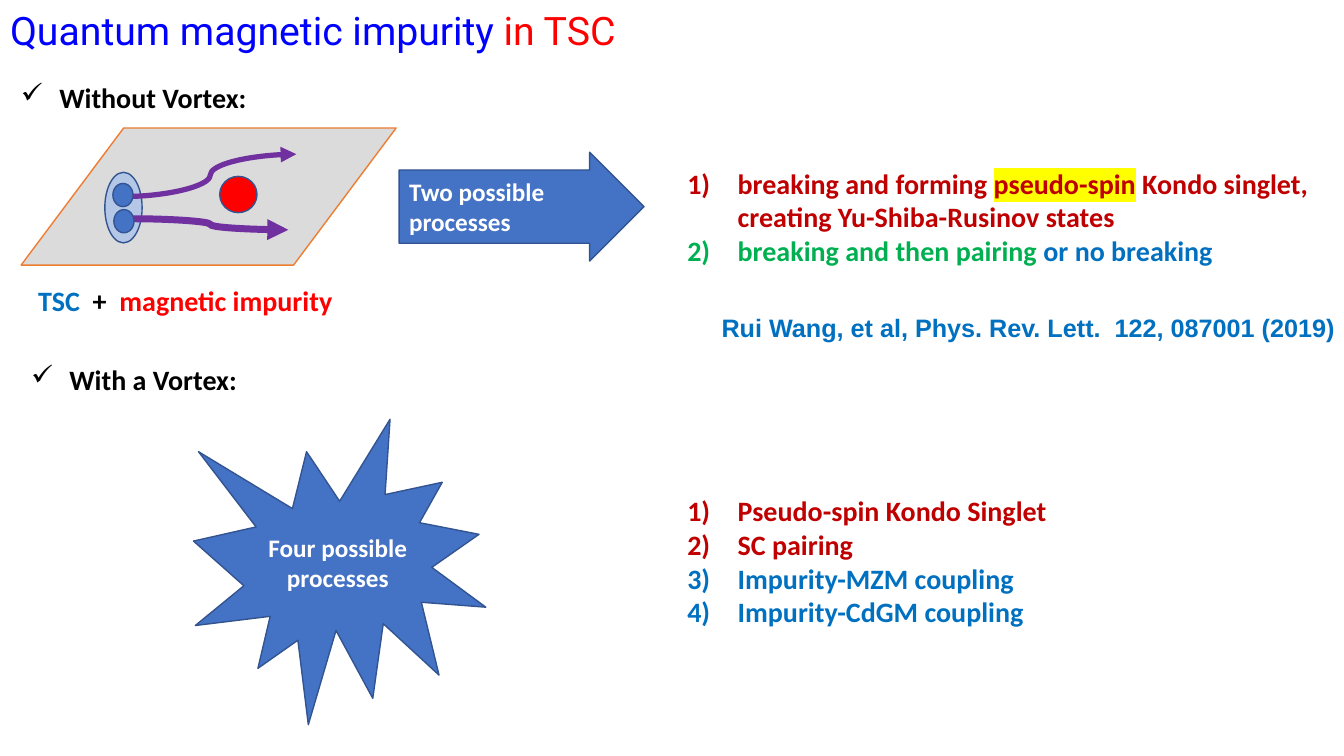
from lxml.etree import SubElement
from pptx import Presentation
from pptx.dml.color import RGBColor
from pptx.enum.shapes import MSO_CONNECTOR as Connector, MSO_SHAPE as Shape
from pptx.enum.text import MSO_ANCHOR as Anchor, MSO_AUTO_SIZE as AutoSize, PP_ALIGN as Align
from pptx.oxml import parse_xml
from pptx.oxml.ns import nsdecls, qn
from pptx.util import Inches, Pt

# The grid has ten columns and ten rows to the inch
CELL = Inches(0.1)
COLS, ROWS = 133.33, 75

COLORS = {
    "black": "000000", "white": "FFFFFF", "title": "0000FF", "red": "FF0000",
    "crimson": "C00000", "blue": "0070C0", "green": "00B050", "yellow": "FFFF00",
    "fill": "4472C4", "outline": "325491", "pair": "B4C7E7",
    "plane": "DBDBDB", "orange": "ED7D31", "purple": "7030A0",
}


def color(name):
    return RGBColor.from_string(COLORS[name])


def grid(*cells):
    return [round(c * CELL) for c in cells]


def add_runs(p, runs, size, font="Calibri", bold=True):
    """Write (text, colour[, highlight]) runs; a newline is a line break."""
    p.font.size, p.font.name, p.font.bold = Pt(size), font, bold
    for text, name, *mark in runs:
        for i, line in enumerate(text.split("\n")):
            if i:
                p.add_line_break()
            r = p.add_run()
            r.text = line
            r.font.color.rgb = color(name)
            if mark:
                hl = SubElement(r._r.get_or_add_rPr(), qn("a:highlight"))
                SubElement(hl, qn("a:srgbClr")).set("val", COLORS[mark[0]])


def add_bullet(p, indent, tag, **attrs):
    pPr = p._p.get_or_add_pPr()
    pPr.set("marL", str(Inches(indent)))
    pPr.set("indent", str(-Inches(indent)))
    values = " ".join(f'{k}="{v}"' for k, v in attrs.items())
    pPr.insert(0, parse_xml(f'<a:{tag} {nsdecls("a")} {values}/>'))


def add_text(slide, box, paragraphs, size=20, font="Calibri"):
    tf = slide.shapes.add_textbox(*grid(*box)).text_frame
    tf.word_wrap = True
    for i, runs in enumerate(paragraphs):
        p = tf.add_paragraph() if i else tf.paragraphs[0]
        add_runs(p, runs, size, font)
    return tf.paragraphs


def add_heading(slide, box, text):
    for p in add_text(slide, box, [[(text, "black")]]):
        add_bullet(p, 0.38, "buChar", char="✓")


def add_numbered(slide, box, paragraphs):
    for p in add_text(slide, box, paragraphs):
        add_bullet(p, 0.5, "buAutoNum", type="arabicParenR")


def add_figure(slide, kind, box, fill="fill", line="outline", adjust=()):
    sp = slide.shapes.add_shape(kind, *grid(*box))
    sp.shadow.inherit = False
    sp.fill.solid()
    sp.fill.fore_color.rgb = color(fill)
    sp.line.color.rgb = color(line)
    sp.line.width = Pt(1)
    for i, value in enumerate(adjust):
        sp.adjustments[i] = value
    return sp


def add_label(sp, text, align):
    tf = sp.text_frame
    tf.word_wrap = True
    tf.vertical_anchor = Anchor.MIDDLE
    p = tf.paragraphs[0]
    p.alignment = align
    add_runs(p, [(text, "white")], 18)


def add_path(slide, ends, width):
    cxn = slide.shapes.add_connector(Connector.CURVE, *grid(*ends))
    cxn.line.color.rgb = color("purple")
    cxn.line.width = Pt(width)
    SubElement(cxn.line._get_or_add_ln(), qn("a:tailEnd")).set("type", "triangle")
    SubElement(cxn._element.spPr, qn("a:effectLst"))


def add_title(slide, box, runs):
    title = slide.shapes.title
    title.left, title.top, title.width, title.height = grid(*box)
    tf = title.text_frame
    tf.word_wrap = True
    tf.auto_size = AutoSize.NONE
    tf.vertical_anchor = Anchor.TOP
    tf.paragraphs[0].alignment = Align.LEFT
    add_runs(tf.paragraphs[0], runs, 28, "Roboto", False)


def add_scattering(slide):
    """Electron pair passing a magnetic impurity on a plane."""
    add_figure(slide, Shape.PARALLELOGRAM, (2.1, 12.7, 37.2, 13.6), "plane", "orange", [0.748])
    add_figure(slide, Shape.OVAL, (10.4, 17.1, 3.7, 7), "pair")
    add_figure(slide, Shape.OVAL, (21.8, 17.5, 3.7, 3.6), "red")
    add_path(slide, (12.3, 19.5, 29.4, 15.3), 3.75)
    add_path(slide, (13.1, 21.7, 28.6, 22.8), 5)
    for left, top in ((11.2, 18.2), (11.3, 20.8)):
        add_figure(slide, Shape.OVAL, (left, top, 2, 2.3))


def main():
    prs = Presentation()
    prs.slide_width, prs.slide_height = grid(COLS, ROWS)
    slide = prs.slides.add_slide(prs.slide_layouts[5])
    add_title(slide, (0, 0.1, 63.4, 5.7),
              [("Quantum magnetic impurity ", "title"), ("in TSC", "red")])

    # Without vortex
    add_heading(slide, (1.1, 7.5, 45, 4.4), "Without Vortex:")
    add_scattering(slide)
    add_text(slide, (2.8, 27.6, 32.1, 4.4),
             [[("TSC  ", "blue"), ("+  ", "black"), ("magnetic impurity", "red")]])
    arrow = add_figure(slide, Shape.RIGHT_ARROW, (39.6, 15.1, 24.3, 10.8), adjust=[0.673, 0.5])
    add_label(arrow, "Two possible processes", Align.LEFT)
    add_numbered(slide, (67.2, 16, 64.1, 11.1), [
        [("breaking and forming ", "crimson"), ("pseudo-spin", "crimson", "yellow"),
         (" Kondo singlet,\ncreating Yu-Shiba-Rusinov states", "crimson")],
        [("breaking and then pairing ", "green"), ("or no breaking", "blue")],
    ])
    add_text(slide, (70.6, 30.5, 64.1, 4),
             [[("Rui Wang, et al, Phys. Rev. Lett.  122, 087001 (2019)", "blue")]], 18, "Arial")

    # With a vortex
    add_heading(slide, (2.1, 35.5, 45, 4.4), "With a Vortex:")
    burst = add_figure(slide, Shape.EXPLOSION1, (19.2, 41.6, 29, 30.3))
    add_label(burst, "Four possible processes", Align.CENTER)
    add_numbered(slide, (67.2, 48.5, 38.6, 14.5), [
        [("Pseudo-spin Kondo Singlet", "crimson")],
        [("SC pairing", "crimson")],
        [("Impurity-MZM coupling", "blue")],
        [("Impurity-CdGM coupling", "blue")],
    ])
    prs.save("out.pptx")


if __name__ == "__main__":
    main()
